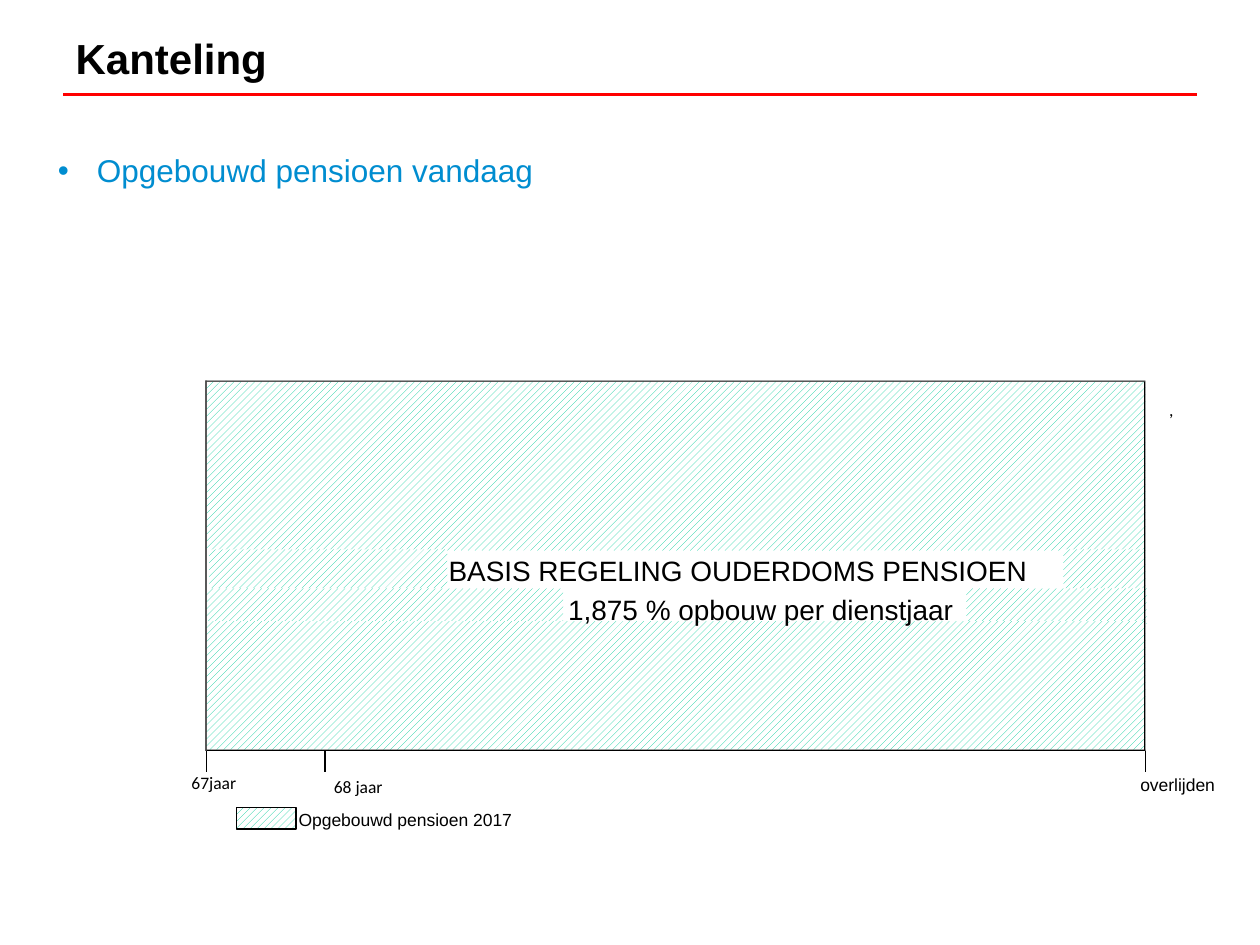
from dataclasses import dataclass

from lxml import etree
from pptx import Presentation
from pptx.dml.color import RGBColor
from pptx.enum.dml import MSO_PATTERN
from pptx.enum.shapes import MSO_CONNECTOR, MSO_SHAPE
from pptx.enum.text import MSO_ANCHOR, MSO_AUTO_SIZE, PP_ALIGN
from pptx.oxml.ns import qn
from pptx.shapes.autoshape import Shape
from pptx.slide import Slide
from pptx.text.text import TextFrame
from pptx.util import Emu, Pt

RECTANGLE = MSO_SHAPE.RECTANGLE
STRAIGHT = MSO_CONNECTOR.STRAIGHT
HATCH = MSO_PATTERN.WIDE_UPWARD_DIAGONAL
LEFT = PP_ALIGN.LEFT
NO_AUTOFIT = MSO_AUTO_SIZE.NONE

BLACK = RGBColor(0x00, 0x00, 0x00)
WHITE = RGBColor(0xFF, 0xFF, 0xFF)
RED = RGBColor(0xFF, 0x00, 0x00)
BLUE = RGBColor(0x00, 0x8D, 0xD0)
GREEN = RGBColor(0x00, 0xCC, 0x99)

EMU_PER_PX = 9144  # 100 px to the inch


@dataclass(frozen=True)
class Box:
    left: int
    top: int
    width: int
    height: int


@dataclass(frozen=True)
class Label:
    text: str
    box: Box
    size: int = 10
    font: str = "Arial"


PENSION = Box(164, 303, 745, 293)
PENSION_RIGHT = PENSION.left + PENSION.width
PENSION_BOTTOM = PENSION.top + PENSION.height
TICK_LENGTH = 17
TICKS = (PENSION.left, 258, PENSION_RIGHT)

# The hatching leaves room for the two lines of text in the middle.
HATCHED_PARTS = (
    Box(164, 303, 745, 134),
    Box(166, 436, 189, 31),
    Box(844, 436, 65, 31),
    Box(164, 467, 283, 28),
    Box(767, 467, 143, 28),
    Box(164, 493, 745, 102),
)
EDGES = (
    Box(PENSION.left - 1, PENSION.top - 1, 1, PENSION.height + 1),
    Box(PENSION_RIGHT - 1, PENSION.top, 1, PENSION.height),
    Box(PENSION.left, PENSION.top - 1, PENSION.width, 1),
    Box(PENSION.left, PENSION_BOTTOM - 1, PENSION.width, 1),
)
LEGEND_SWATCH = Box(188, 641, 47, 17)
LABELS = (
    Label("BASIS REGELING OUDERDOMS PENSIOEN", Box(356, 439, 478, 27), 16),
    Label("1,875 % opbouw per dienstjaar", Box(451, 470, 323, 27), 16),
    Label("overlijden", Box(905, 614, 66, 18)),
    Label("Opgebouwd pensioen 2017", Box(237, 642, 170, 17)),
    Label(",", Box(928, 317, 3, 17), font="Calibri"),
    Label("67jaar", Box(152, 613, 36, 17), font="Calibri"),
    Label("68 jaar", Box(265, 616, 39, 17), font="Calibri"),
)


def px(length: int) -> Emu:
    return Emu(length * EMU_PER_PX)


def bounds(box: Box) -> tuple[Emu, Emu, Emu, Emu]:
    return px(box.left), px(box.top), px(box.width), px(box.height)


def place(shape: Shape, box: Box) -> None:
    shape.left, shape.top, shape.width, shape.height = bounds(box)


def clear_insets(frame: TextFrame) -> None:
    frame.margin_left = frame.margin_right = 0
    frame.margin_top = frame.margin_bottom = 0


def write(frame: TextFrame, text: str, size: int, color: RGBColor,
          font: str = "Arial", bold: bool = False) -> None:
    """Add one left-aligned run to the first paragraph."""
    paragraph = frame.paragraphs[0]
    paragraph.alignment = LEFT
    paragraph.space_before = Pt(0)
    run = paragraph.add_run()
    run.text = text
    run.font.name = font
    run.font.size = Pt(size)
    run.font.bold = bold
    run.font.color.rgb = color


def add_bar(slide: Slide, box: Box) -> None:
    bar = slide.shapes.add_shape(RECTANGLE, *bounds(box))
    bar.shadow.inherit = False
    bar.fill.solid()
    bar.fill.fore_color.rgb = BLACK
    bar.line.fill.background()


def add_hatched(slide: Slide, box: Box, outlined: bool = False) -> None:
    area = slide.shapes.add_shape(RECTANGLE, *bounds(box))
    area.shadow.inherit = False
    area.fill.patterned()
    area.fill.pattern = HATCH
    area.fill.fore_color.rgb = GREEN
    area.fill.back_color.rgb = WHITE
    if outlined:
        area.line.color.rgb = BLACK
        area.line.width = Pt(0.75)
    else:
        area.line.fill.background()


def add_line(slide: Slide, start: tuple[int, int], end: tuple[int, int],
             color: RGBColor, width: float) -> None:
    line = slide.shapes.add_connector(
        STRAIGHT, px(start[0]), px(start[1]), px(end[0]), px(end[1]))
    line.line.color.rgb = color
    line.line.width = Pt(width)
    etree.SubElement(line._element.spPr, qn("a:effectLst"))


def add_label(slide: Slide, label: Label) -> None:
    frame = slide.shapes.add_textbox(*bounds(label.box)).text_frame
    clear_insets(frame)
    frame.word_wrap = False
    write(frame, label.text, label.size, BLACK, label.font)


def fill_title(slide: Slide) -> None:
    title = slide.shapes.title
    place(title, Box(50, 0, 717, 92))
    title.text_frame.vertical_anchor = MSO_ANCHOR.MIDDLE
    title.text_frame.auto_size = NO_AUTOFIT
    write(title.text_frame, "Kanteling", 24, BLACK, bold=True)


def fill_body(slide: Slide) -> None:
    body = slide.placeholders[1]
    place(body, Box(46, 120, 925, 122))
    frame = body.text_frame
    clear_insets(frame)
    frame.auto_size = NO_AUTOFIT
    properties = frame.paragraphs[0]._p.get_or_add_pPr()
    properties.set("marL", str(px(31)))
    properties.set("indent", str(px(-31)))
    etree.SubElement(properties, qn("a:buChar")).set("char", "•")
    write(frame, "Opgebouwd pensioen vandaag", 18, BLUE)


def main() -> None:
    presentation = Presentation()
    presentation.slide_width = px(1000)
    presentation.slide_height = px(750)
    slide = presentation.slides.add_slide(presentation.slide_layouts[1])

    add_line(slide, (50, 75), (950, 75), RED, 2)
    fill_title(slide)
    fill_body(slide)
    for part in HATCHED_PARTS:
        add_hatched(slide, part)
    for edge in EDGES:
        add_bar(slide, edge)
    for x in TICKS:
        add_line(slide, (x, PENSION_BOTTOM),
                 (x, PENSION_BOTTOM + TICK_LENGTH), BLACK, 0.75)
    add_hatched(slide, LEGEND_SWATCH, outlined=True)
    for label in LABELS:
        add_label(slide, label)

    presentation.save("out.pptx")


if __name__ == "__main__":
    main()
